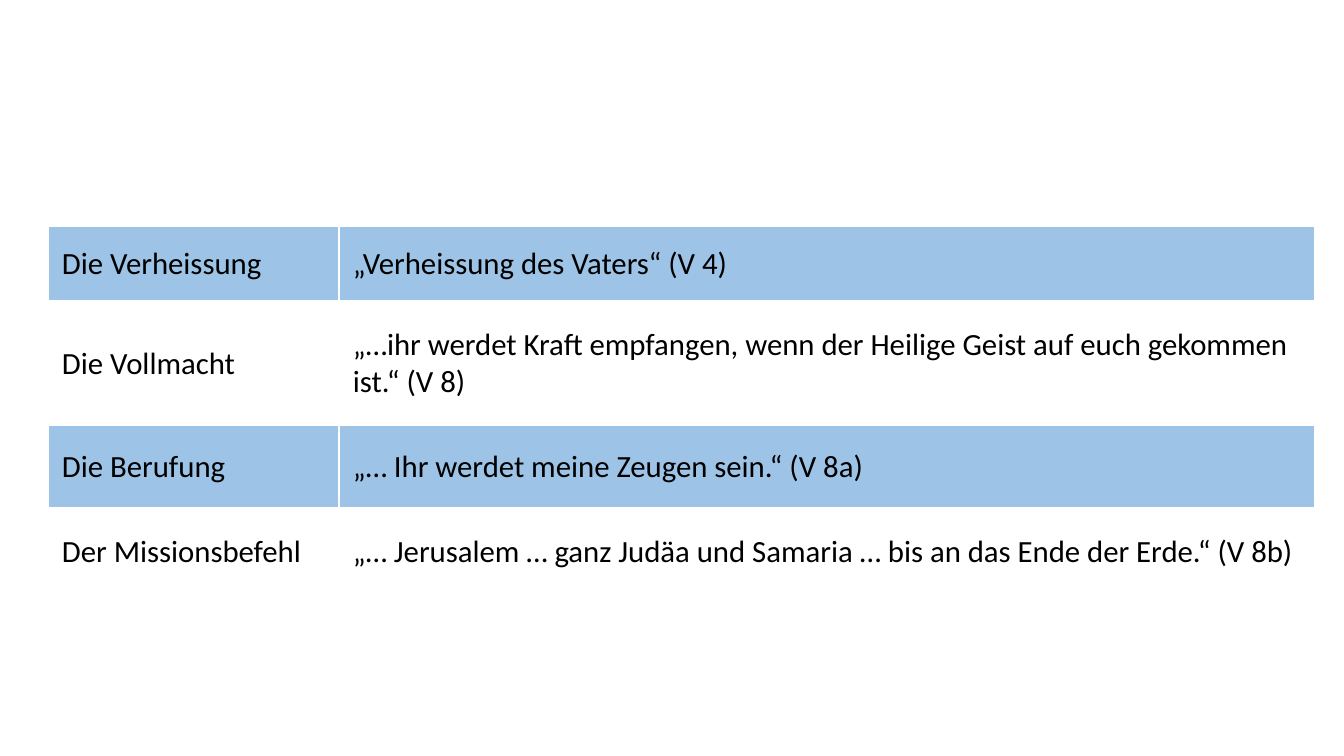
"""Build a slide with a table of four promises and their verses."""
from lxml import etree
from pptx import Presentation, util as u
from pptx.dml.color import RGBColor
from pptx.enum import text as t
from pptx.oxml import ns

EMU_PER_PX = 914400 / 100.8
BLUE = RGBColor(0x9D, 0xC3, 0xE6)
WHITE = RGBColor(0xFF, 0xFF, 0xFF)
BLACK = RGBColor(0, 0, 0)

COLUMN_WIDTHS = (291, 976)
ROW_HEIGHTS = (76, 123, 83, 88)
VERSES = (
    ("Die Verheissung", "„Verheissung des Vaters“ (V 4)"),
    ("Die Vollmacht", "„…ihr werdet Kraft empfangen, wenn der Heilige Geist auf euch gekommen ist.“ (V 8)"),
    ("Die Berufung", "„… Ihr werdet meine Zeugen sein.“ (V 8a)"),
    ("Der Missionsbefehl", "„… Jerusalem … ganz Judäa und Samaria … bis an das Ende der Erde.“ (V 8b)"),
)


def px(length):
    return u.Emu(round(length * EMU_PER_PX))


def write_text(frame, content, size=22, font="Calibri", color=BLACK):
    run = frame.paragraphs[0].add_run()
    run.text = content
    run.font.size = u.Pt(size)
    run.font.name = font
    run.font.color.rgb = color


def add_borders(cell, top=1, bottom=1, color=WHITE):
    properties = cell._tc.get_or_add_tcPr()
    widths = {"a:lnL": 1, "a:lnR": 1, "a:lnT": top, "a:lnB": bottom}
    for position, (side, width) in enumerate(widths.items()):
        line = etree.Element(ns.qn(side), w=str(u.Pt(width)))
        fill = etree.SubElement(line, ns.qn("a:solidFill"))
        etree.SubElement(fill, ns.qn("a:srgbClr"), val=str(color))
        properties.insert(position, line)


def format_cell(cell, content, fill, **borders):
    cell.margin_left = cell.margin_right = px(14)
    cell.margin_top = cell.margin_bottom = 0
    cell.vertical_anchor = t.MSO_ANCHOR.MIDDLE
    cell.fill.solid()
    cell.fill.fore_color.rgb = fill
    write_text(cell.text_frame, content)
    add_borders(cell, **borders)


def add_verse_table(slide, left, top):
    frame = slide.shapes.add_table(
        len(VERSES), len(COLUMN_WIDTHS), px(left), px(top),
        px(sum(COLUMN_WIDTHS)), px(sum(ROW_HEIGHTS)))
    table = frame.table
    for column, width in zip(table.columns, COLUMN_WIDTHS):
        column.width = px(width)
    for index, (row, height, verse) in enumerate(zip(table.rows, ROW_HEIGHTS, VERSES)):
        row.height = px(height)
        fill = WHITE if index % 2 else BLUE
        for cell, content in zip(row.cells, verse):
            format_cell(cell, content, fill,
                        top=3 if index == 1 else 1,
                        bottom=3 if index == 0 else 1)


def main():
    presentation = Presentation()
    presentation.slide_width = px(1344)
    presentation.slide_height = px(756)
    slide = presentation.slides.add_slide(presentation.slide_layouts[6])
    add_verse_table(slide, 48, 226)
    presentation.save("out.pptx")


if __name__ == "__main__":
    main()
